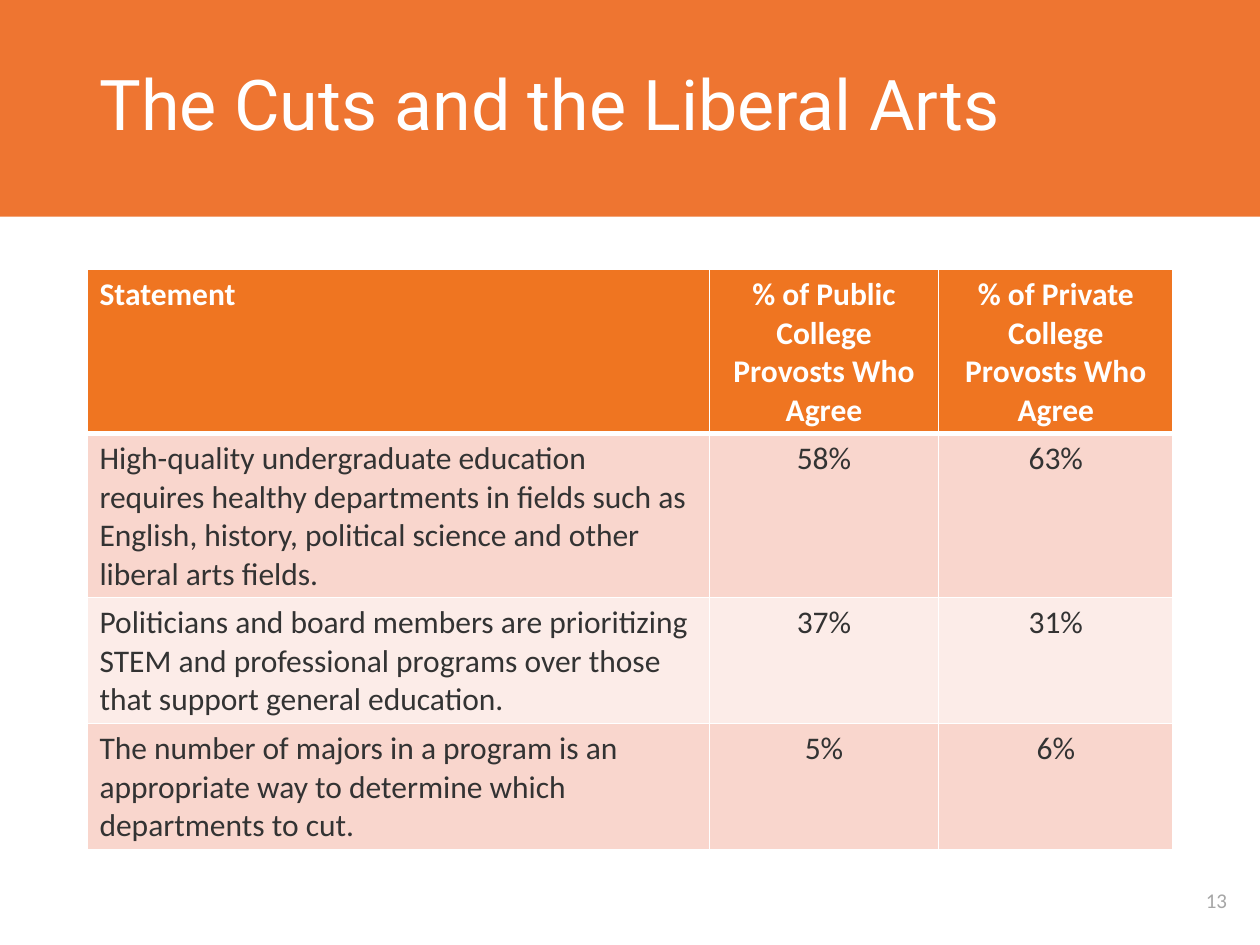
from dataclasses import dataclass

from lxml import etree
from pptx import Presentation, util as u
from pptx.dml.color import RGBColor
from pptx.enum import shapes, text
from pptx.oxml import ns

WHITE, DARK, GRAY = "FFFFFF", "333333", "A6A6A6"
BANNER, HEADER = "EE7531", "EF7521"
BANDS = ("F9D6CD", "FCECE8")
COLUMN_WIDTHS = (4.94, 1.82, 1.86)


@dataclass
class Row:
    cells: tuple[str, str, str]
    height: float


ROWS = [
    Row(("Statement", "% of Public College Provosts Who Agree",
         "% of Private College Provosts Who Agree"), 1.3),
    Row(("High-quality undergraduate education requires healthy departments in fields "
         "such as English, history, political science and other liberal arts fields.",
         "58%", "63%"), 1.3),
    Row(("Politicians and board members are prioritizing STEM and professional programs "
         "over those that support general education.", "37%", "31%"), 1),
    Row(("The number of majors in a program is an appropriate way to determine which "
         "departments to cut.", "5%", "6%"), 1),
]


def rgb(color: str) -> RGBColor:
    return RGBColor.from_string(color)


def write(frame, content: str, size: float, color: str, font: str = "Calibri",
          bold: bool = False, align=text.PP_ALIGN.LEFT):
    paragraph = frame.paragraphs[0]
    paragraph.alignment = align
    run = paragraph.add_run()
    run.text = content
    run.font.name, run.font.size, run.font.bold = font, u.Pt(size), bold
    run.font.color.rgb = rgb(color)
    return paragraph


def set_borders(cell, bottom: float, top: float) -> None:
    """Draw white cell borders; the side borders are 1 pt wide."""
    properties = cell._tc.get_or_add_tcPr()
    for side, width in (("L", 1), ("R", 1), ("T", top), ("B", bottom)):
        line = etree.SubElement(properties, ns.qn(f"a:ln{side}"), w=str(u.Pt(width)))
        fill = etree.SubElement(line, ns.qn("a:solidFill"))
        etree.SubElement(fill, ns.qn("a:srgbClr"), val=WHITE)


def add_banner(slide) -> None:
    banner = slide.shapes.add_shape(
        shapes.MSO_SHAPE.RECTANGLE, u.Inches(-0.01), 0, u.Inches(10.02), u.Inches(1.72))
    banner.shadow.inherit = False
    banner.fill.solid()
    banner.fill.fore_color.rgb = rgb(BANNER)
    banner.line.fill.background()
    slide.shapes._spTree.insert(2, banner._element)  # behind the title


def add_title(slide, content: str) -> None:
    title = slide.shapes.title
    title.left, title.top = u.Inches(0.69), 0
    title.width, title.height = u.Inches(8.62), u.Inches(1.71)
    title.text_frame.vertical_anchor = text.MSO_ANCHOR.MIDDLE
    write(title.text_frame, content, 40, WHITE, "Roboto").line_spacing = 0.9


def add_page_number(slide, number: str) -> None:
    box = slide.shapes.add_textbox(
        u.Inches(9.31), u.Inches(6.95), u.Inches(0.69), u.Inches(0.39))
    box.text_frame.word_wrap = True
    box.text_frame.vertical_anchor = text.MSO_ANCHOR.MIDDLE
    write(box.text_frame, number, 12, GRAY, align=text.PP_ALIGN.CENTER)


def add_survey_table(slide, rows: list[Row]) -> None:
    table = slide.shapes.add_table(
        len(rows), len(COLUMN_WIDTHS), u.Inches(0.69), u.Inches(2.14),
        u.Inches(sum(COLUMN_WIDTHS)), u.Inches(sum(row.height for row in rows))).table
    for column, width in zip(table.columns, COLUMN_WIDTHS):
        column.width = u.Inches(width)
    for r, row in enumerate(rows):
        table.rows[r].height = u.Inches(row.height)
        is_header = r == 0
        for c, content in enumerate(row.cells):
            cell = table.cell(r, c)
            set_borders(cell, bottom=3 if is_header else 1, top=3 if r == 1 else 1)
            cell.fill.solid()
            cell.fill.fore_color.rgb = rgb(HEADER if is_header else BANDS[(r - 1) % 2])
            write(cell.text_frame, content, 18, WHITE if is_header else DARK,
                  bold=is_header,
                  align=text.PP_ALIGN.CENTER if c else text.PP_ALIGN.LEFT)


def main() -> None:
    presentation = Presentation()
    presentation.slide_width, presentation.slide_height = u.Inches(10), u.Inches(7.5)
    slide = presentation.slides.add_slide(presentation.slide_layouts[5])
    add_banner(slide)
    add_title(slide, "The Cuts and the Liberal Arts")
    add_page_number(slide, "13")
    add_survey_table(slide, ROWS)
    presentation.save("out.pptx")


if __name__ == "__main__":
    main()
